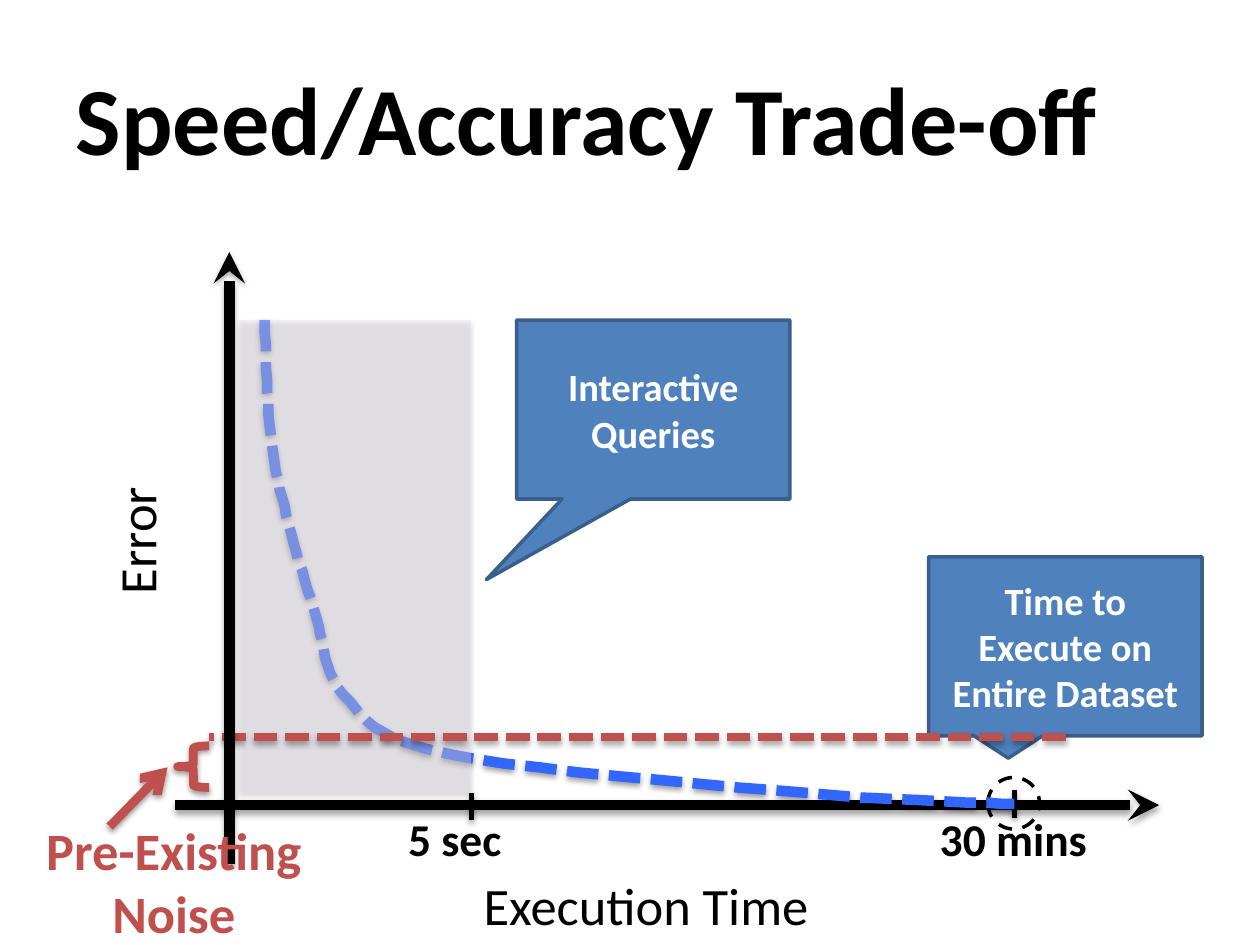
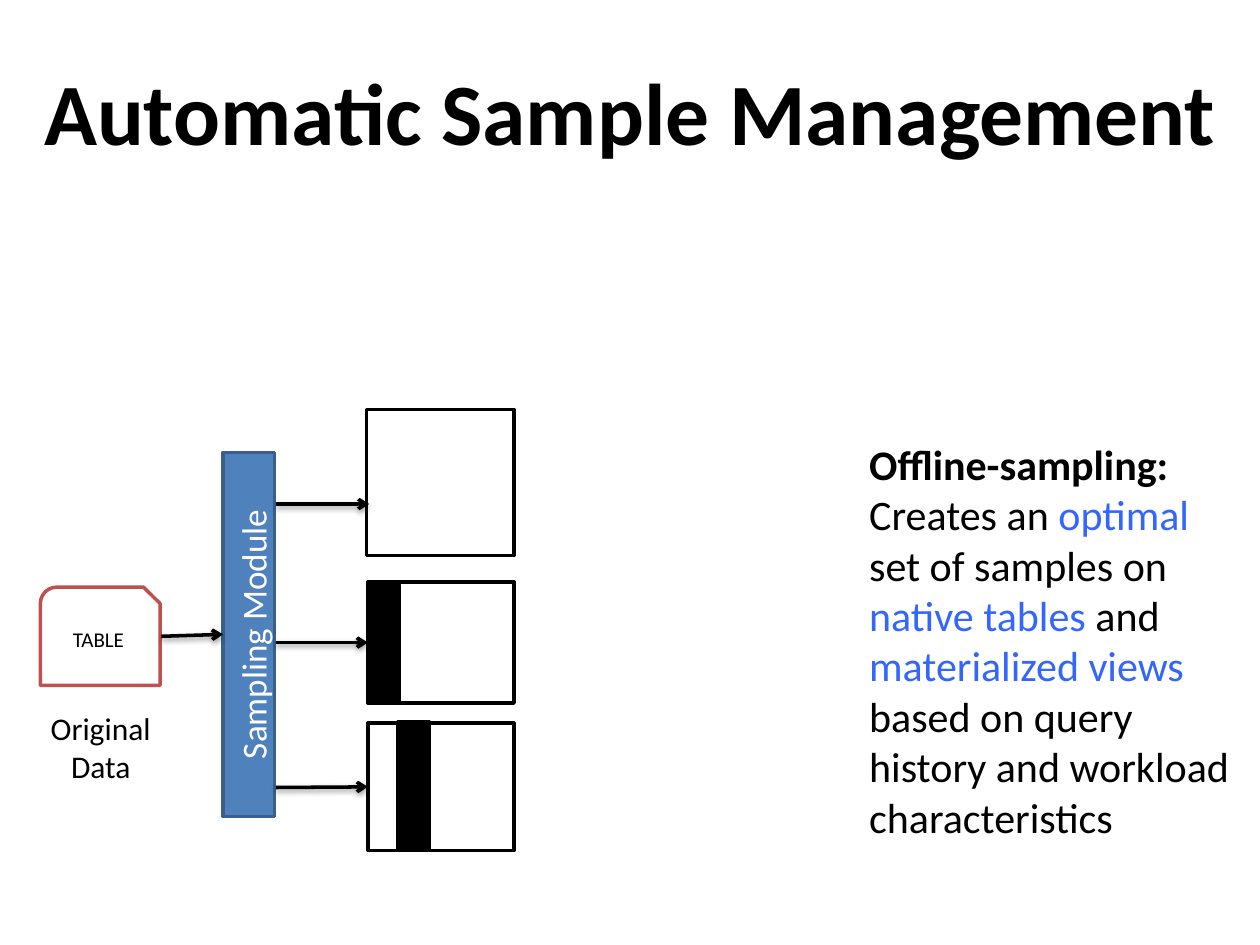
from lxml import etree
from pptx import Presentation
from pptx import util as u
from pptx.dml.color import RGBColor
from pptx.enum import dml, shapes, text
from pptx.oxml.ns import qn

PX = 9144  # EMU per px, 100 px to the inch
FONT = "Calibri"
BLACK, WHITE = "000000", "FFFFFF"
BLUE, BLUE_EDGE, RED = "4F81BD", "3A5F8C", "C0504D"
CURVE_BLUE, BAND_LILAC = "3366FF", "E6E0EC"
SOFT_SHADOW = dict(dist=23000, alpha=35000)
DEEP_SHADOW = dict(dist=20000, alpha=38000)
KIND = shapes.MSO_SHAPE
DASH = dml.MSO_LINE
CENTER = text.PP_ALIGN.CENTER


def px(*lengths):
    return [u.Emu(round(n * PX)) for n in lengths]


def color(hex_code):
    return RGBColor.from_string(hex_code)


# Formatting shared by all elements
def style_runs(frame, size, ink, bold=False, align=None):
    for paragraph in frame.paragraphs:
        paragraph.alignment = align
        for run in paragraph.runs:
            font = run.font
            font.name, font.size, font.bold = FONT, u.Pt(size), bold
            font.color.rgb = color(ink)


def style_line(line, ink, weight, dash=None):
    line.color.rgb = color(ink)
    line.width = u.Pt(weight)
    if dash:
        line.dash_style = dash


def set_shadow(element, shadow):
    """Give the element one drop shadow, or none at all."""
    properties = element._element.spPr
    for inherited in properties.findall(qn("a:effectLst")):
        properties.remove(inherited)
    effects = etree.SubElement(properties, qn("a:effectLst"))
    if shadow:
        outer = etree.SubElement(
            effects, qn("a:outerShdw"), blurRad="40000", dist=str(shadow["dist"]),
            dir="5400000", rotWithShape="0")
        ink = etree.SubElement(outer, qn("a:srgbClr"), val=BLACK)
        etree.SubElement(ink, qn("a:alpha"), val=str(shadow["alpha"]))


# Kinds of element
def add_titled_slide(deck, title, box, size):
    slide = deck.slides.add_slide(deck.slide_layouts[5])
    heading = slide.shapes.title
    heading.left, heading.top, heading.width, heading.height = px(*box)
    frame = heading.text_frame
    frame.text = title
    frame.auto_size = text.MSO_AUTO_SIZE.NONE
    frame.vertical_anchor = text.MSO_ANCHOR.MIDDLE
    style_runs(frame, size, BLACK, True, text.PP_ALIGN.LEFT)
    return slide


def add_label(slide, words, box, size, ink=BLACK, bold=False, align=None):
    label = slide.shapes.add_textbox(*px(*box))
    frame = label.text_frame
    frame.text = words
    frame.word_wrap = False
    frame.auto_size = text.MSO_AUTO_SIZE.SHAPE_TO_FIT_TEXT
    style_runs(frame, size, ink, bold, align)
    return label


def add_figure(slide, kind, box, fill=None, edge=None, weight=2, dash=None, shadow=None):
    figure = slide.shapes.add_shape(kind, *px(*box))
    if fill:
        figure.fill.solid()
        figure.fill.fore_color.rgb = color(fill)
    else:
        figure.fill.background()
    if edge:
        style_line(figure.line, edge, weight, dash)
    else:
        figure.line.fill.background()
    set_shadow(figure, shadow)
    return figure


def write_in(figure, words, size, ink, bold=False):
    frame = figure.text_frame
    frame.text = words
    frame.word_wrap = True
    frame.vertical_anchor = text.MSO_ANCHOR.MIDDLE
    style_runs(frame, size, ink, bold, CENTER)


def add_callout(slide, words, corner, tip=None):
    callout = add_figure(slide, KIND.RECTANGULAR_CALLOUT, (*corner, 217, 142), BLUE, BLUE_EDGE)
    if tip:
        callout.adjustments[0], callout.adjustments[1] = tip
    write_in(callout, words, 22, WHITE, True)


def add_line(slide, start, end, ink=BLACK, weight=2, dash=None, head=None, shadow=DEEP_SHADOW):
    line = slide.shapes.add_connector(shapes.MSO_CONNECTOR.STRAIGHT, *px(*start, *end))
    style_line(line.line, ink, weight, dash)
    if head:
        etree.SubElement(line.line._get_or_add_ln(), qn("a:tailEnd"), type=head)
    set_shadow(line, shadow)
    return line


def bezier_points(start, segments, steps=10):
    points = [start]
    for a, b, end in segments:
        begin = points[-1]
        for step in range(1, steps + 1):
            t = step / steps
            s = 1 - t
            points.append(tuple(
                s**3 * p + 3 * s * s * t * q + 3 * s * t * t * r + t**3 * e
                for p, q, r, e in zip(begin, a, b, end)))
    return points


def add_curve(slide, start, segments):
    points = bezier_points(start, segments)
    builder = slide.shapes.build_freeform(*points[0], scale=PX)
    builder.add_line_segments(points[1:], close=False)
    curve = builder.convert_to_shape()
    curve.fill.background()
    style_line(curve.line, CURVE_BLUE, 6, DASH.SQUARE_DOT)
    set_shadow(curve, DEEP_SHADOW)


# Slides
def build_tradeoff(deck):
    slide = add_titled_slide(deck, "Speed/Accuracy Trade-off", (50, 30, 933, 125), 55)

    # Time axis with its labels
    add_figure(slide, KIND.OVAL, (784, 617, 41, 41), edge=BLACK, dash=DASH.DASH)
    add_line(slide, (139, 639), (920, 639), weight=6, head="stealth", shadow=SOFT_SHADOW)
    add_label(slide, "Execution Time", (374, 688, 287, 61), 30)
    add_label(slide, "Error", (54, 397, 108, 61), 30).rotation = 270
    add_line(slide, (805, 627), (805, 649), weight=3, shadow=SOFT_SHADOW)
    add_label(slide, "30 mins", (736, 639, 138, 54), 26, bold=True)

    # Error curve, interactive band and callouts
    add_curve(slide, (210, 254), [
        ((211, 286), (212, 319), (215, 346)),
        ((218, 373), (223, 392), (229, 416)),
        ((235, 440), (244, 467), (251, 490)),
        ((258, 512), (256, 533), (273, 552)),
        ((290, 570), (293, 585), (354, 598)),
        ((415, 611), (562, 623), (637, 629)),
        ((712, 636), (805, 638), (805, 638)),
    ])
    add_callout(slide, "Time to Execute on\nEntire Dataset", (737, 442))
    band = add_figure(slide, KIND.RECTANGLE, (190, 254, 184, 375), BAND_LILAC, shadow=SOFT_SHADOW)
    band_ink = band._element.spPr.find(qn("a:solidFill"))[0]
    etree.SubElement(band_ink, qn("a:alpha"), val="41000")
    add_callout(slide, "Interactive\nQueries", (410, 254), (-0.61, 0.95))
    add_label(slide, "5 sec", (314, 639, 95, 54), 26, bold=True)

    # Noise level
    add_line(slide, (846, 585), (166, 585), RED, 4.5, DASH.SQUARE_DOT, shadow=SOFT_SHADOW)
    add_figure(slide, KIND.LEFT_BRACE, (141, 592, 25, 33), edge=RED, weight=5, shadow=DEEP_SHADOW)
    add_line(slide, (87, 656), (133, 609), RED, 5, head="arrow")

    # Error axis
    add_line(slide, (374, 629), (374, 651), weight=3, shadow=SOFT_SHADOW)
    add_line(slide, (182, 686), (182, 200), weight=6, head="stealth", shadow=SOFT_SHADOW)
    add_label(slide, "Pre-Existing\nNoise", (25, 644, 226, 111), 30, RED, True, CENTER)


def build_sampling(deck):
    slide = add_titled_slide(deck, "Automatic Sample Management", (25, 25, 967, 125), 50)

    # Source table and sampling module
    table = add_figure(slide, KIND.SNIP_ROUND_RECTANGLE, (32, 466, 95, 78), WHITE, RED)
    write_in(table, "TABLE", 12, BLACK)
    add_label(slide, "Original\nData", (30, 558, 100, 71), 18, align=CENTER)
    module = add_figure(slide, KIND.RECTANGLE, (177, 359, 41, 289), BLUE, BLUE_EDGE)
    write_in(module, "Sampling Module", 20, WHITE)
    frame = module.text_frame
    frame.margin_left, frame.margin_right = px(6, 0)
    frame._txBody.bodyPr.set("vert", "vert270")

    # Samples, each with its chosen column
    boxes = [(291, 325, 117, 116), (292, 462, 116, 96), (292, 574, 116, 101)]
    samples = [add_figure(slide, KIND.RECTANGLE, box, WHITE, BLACK) for box in boxes]
    for column in [(292, 464, 25, 94), (316, 573, 25, 102)]:
        add_figure(slide, KIND.RECTANGLE, column, BLACK, BLACK)

    # Flow from the table to the samples
    add_line(slide, (128, 505), (177, 503), head="arrow").end_connect(module, 1)
    add_line(slide, (219, 400), (293, 400), head="arrow")
    for sample, y in zip(samples[1:], (510, 625)):
        add_line(slide, (219, y), (292, y), head="arrow").end_connect(sample, 1)

    # Explanation
    note = slide.shapes.add_textbox(*px(680, 343, 320, 332)).text_frame
    note.word_wrap = True
    paragraph = note.paragraphs[0]
    paragraph.space_before = u.Pt(20)
    parts = ["Offline-sampling: ", "Creates an ", "optimal", " set of samples on ",
             "native tables", " and ", "materialized views",
             " based on query history and workload characteristics"]
    for part in parts:
        paragraph.add_run().text = part
    style_runs(note, 24, BLACK)
    paragraph.runs[0].font.bold = True
    for key_term in paragraph.runs[2:7:2]:
        key_term.font.color.rgb = color(CURVE_BLUE)


def main():
    deck = Presentation()
    deck.slide_width, deck.slide_height = px(1000, 750)
    build_tradeoff(deck)
    build_sampling(deck)
    deck.save("out.pptx")


if __name__ == "__main__":
    main()
